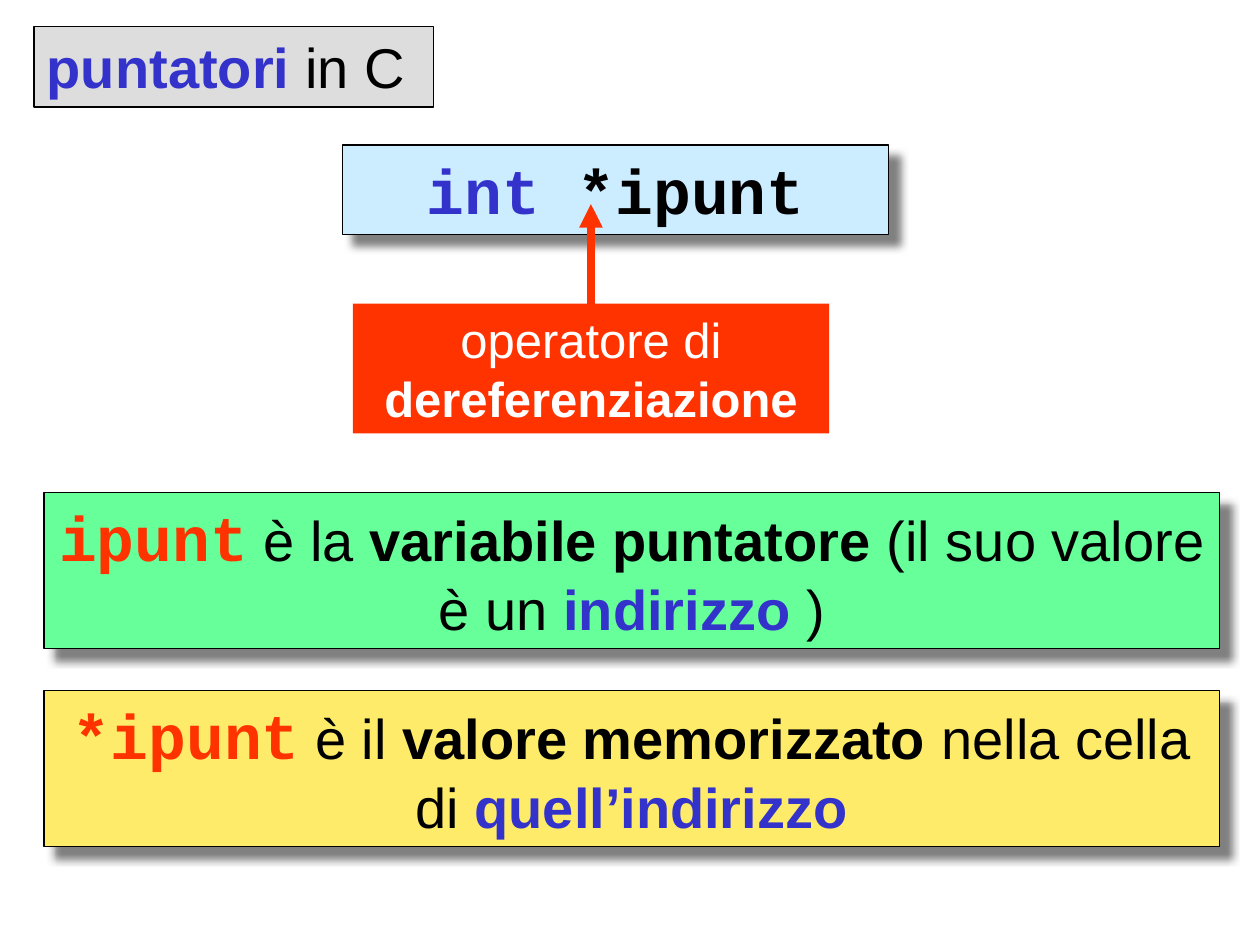
import pptx
import pptx.dml.color
import pptx.enum.shapes
import pptx.enum.text
import pptx.oxml.ns
import pptx.util
from dataclasses import dataclass
from lxml import etree

Inches = pptx.util.Inches
Pt = pptx.util.Pt
qn = pptx.oxml.ns.qn


@dataclass(frozen=True)
class Theme:
    black: str = "000000"
    white: str = "FFFFFF"
    blue: str = "3333CC"
    red: str = "FF3300"
    grey: str = "DDDDDD"
    sky: str = "CCECFF"
    green: str = "66FF99"
    yellow: str = "FDEB69"
    shadow: str = "808080"
    text: str = "Arial"
    code: str = "Courier New"
    note_size: int = 28
    text_size: int = 32
    code_size: int = 36


THEME = Theme()


def rgb(value):
    return pptx.dml.color.RGBColor.from_string(value)


# Run styles: each returns (text, format values, colour)
def prose(text, color=THEME.black, bold=False, size=THEME.text_size):
    return text, {"name": THEME.text, "size": Pt(size), "bold": bold}, color


def code(text, color=THEME.black):
    return text, {"name": THEME.code, "size": Pt(THEME.code_size), "bold": True}, color


def write_text(box, runs, wrap=True):
    frame = box.text_frame
    settings = {
        "word_wrap": wrap,
        "auto_size": pptx.enum.text.MSO_AUTO_SIZE.NONE,
        "vertical_anchor": pptx.enum.text.MSO_ANCHOR.TOP,
    }
    for key, value in settings.items():
        setattr(frame, key, value)
    paragraph = frame.paragraphs[0]
    paragraph.alignment = pptx.enum.text.PP_ALIGN.CENTER
    for text, values, color in runs:
        run = paragraph.add_run()
        run.text = text
        for key, value in values.items():
            setattr(run.font, key, value)
        run.font.color.rgb = rgb(color)


def paint(box, fill, outlined=True):
    box.fill.solid()
    box.fill.fore_color.rgb = rgb(fill)
    if outlined:
        box.line.color.rgb = rgb(THEME.black)
        box.line.width = Pt(0.75)
    else:
        box.line.fill.background()


def add_panel(shapes, area, fill, runs, raised=True):
    """Filled text panel; a raised one has an outline and a drop shadow."""
    panel = shapes.add_shape(pptx.enum.shapes.MSO_SHAPE.RECTANGLE,
                             *(Inches(v) for v in area))
    paint(panel, fill, outlined=raised)
    panel.shadow.inherit = False
    if raised:
        effects = panel.element.spPr.find(qn("a:effectLst"))
        drop = etree.SubElement(effects, qn("a:outerShdw"), blurRad=str(Pt(5)),
                                dist=str(Pt(8.5)), dir=str(45 * 60000),
                                algn="ctr", rotWithShape="0")
        etree.SubElement(drop, qn("a:srgbClr"), val=THEME.shadow)
    write_text(panel, runs)


def add_arrow(shapes, start, end, color):
    arrow = shapes.add_connector(pptx.enum.shapes.MSO_CONNECTOR.STRAIGHT,
                                 *(Inches(v) for v in start + end))
    arrow.line.color.rgb = rgb(color)
    arrow.line.width = Pt(4.5)
    etree.SubElement(arrow.line._get_or_add_ln(), qn("a:tailEnd"), type="triangle")
    etree.SubElement(arrow._element.spPr, qn("a:effectLst"))


def set_title(title, area, runs):
    for key, value in zip(("left", "top", "width", "height"), area):
        setattr(title, key, Inches(value))
    paint(title, THEME.grey)
    write_text(title, runs, wrap=False)


def main():
    deck = pptx.Presentation()
    deck.slide_width, deck.slide_height = Inches(10), Inches(7.5)
    slide = deck.slides.add_slide(deck.slide_layouts[5])
    shapes = slide.shapes

    # Title
    set_title(shapes.title, (0.27, 0.21, 3.17, 0.64),
              [prose("puntatori ", THEME.blue, True), prose("in C ")])

    # What the pointer and the dereferenced pointer mean
    statements = [
        (THEME.green, [
            code("ipunt", THEME.red), prose(" è la"),
            prose(" variabile puntatore ", bold=True),
            prose("(il suo valore è un "),
            prose("indirizzo ", THEME.blue, True), prose(")")]),
        (THEME.yellow, [
            code("*ipunt", THEME.red), prose(" è il"),
            prose(" valore memorizzato ", bold=True),
            prose("nella cella di "),
            prose("quell’indirizzo", THEME.blue, True)]),
    ]
    for row, (fill, runs) in enumerate(statements):
        add_panel(shapes, (0.35, 3.91 + row * 1.57, 9.33, 1.24), fill, runs)

    # Declaration
    add_panel(shapes, (2.72, 1.15, 4.33, 0.71), THEME.sky,
              [code("int", THEME.blue), code(" *ipunt")])

    # Operator label pointing at the asterisk
    operator = shapes.add_group_shape().shapes
    add_panel(operator, (2.8, 2.41, 3.78, 1.03), THEME.red,
              [prose("operatore di ", THEME.white, size=THEME.note_size),
               prose("dereferenziazione", THEME.white, True, THEME.note_size)],
              raised=False)
    add_arrow(operator, (4.69, 2.41), (4.69, 1.62), THEME.red)

    deck.save("out.pptx")


if __name__ == "__main__":
    main()
